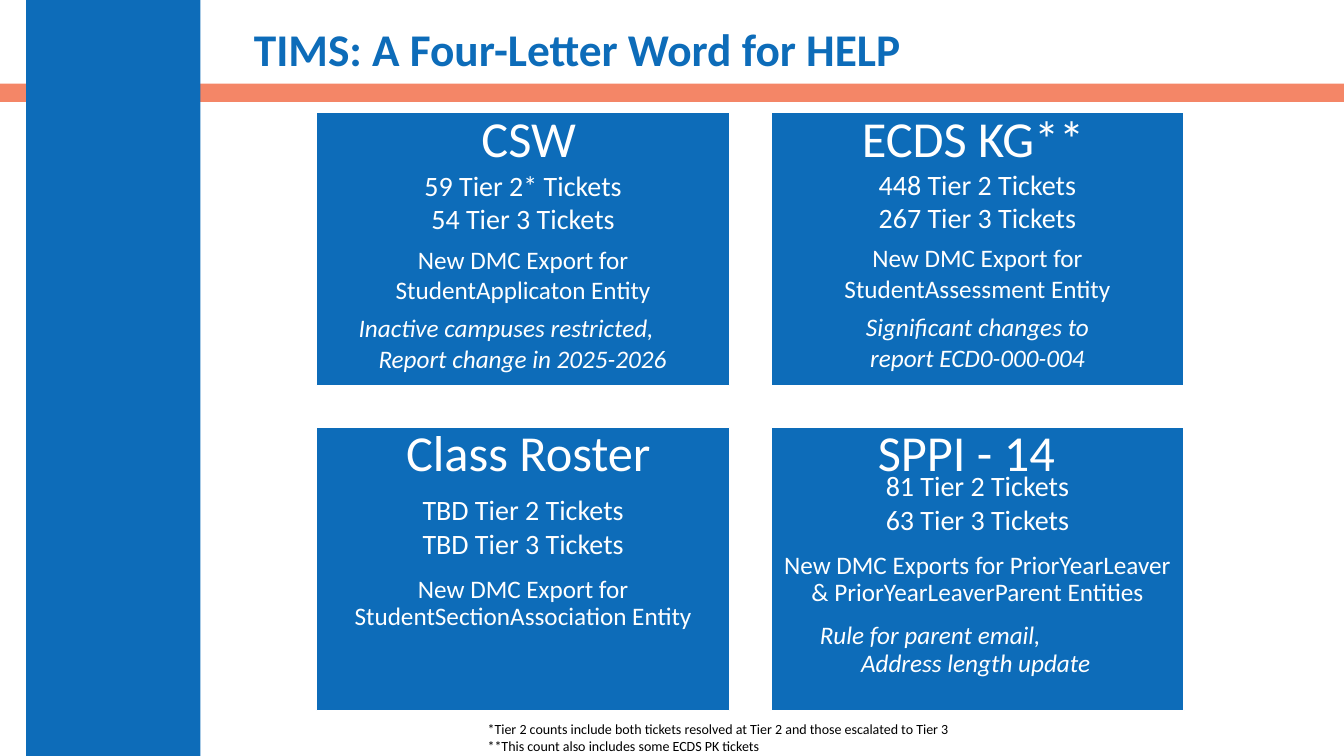
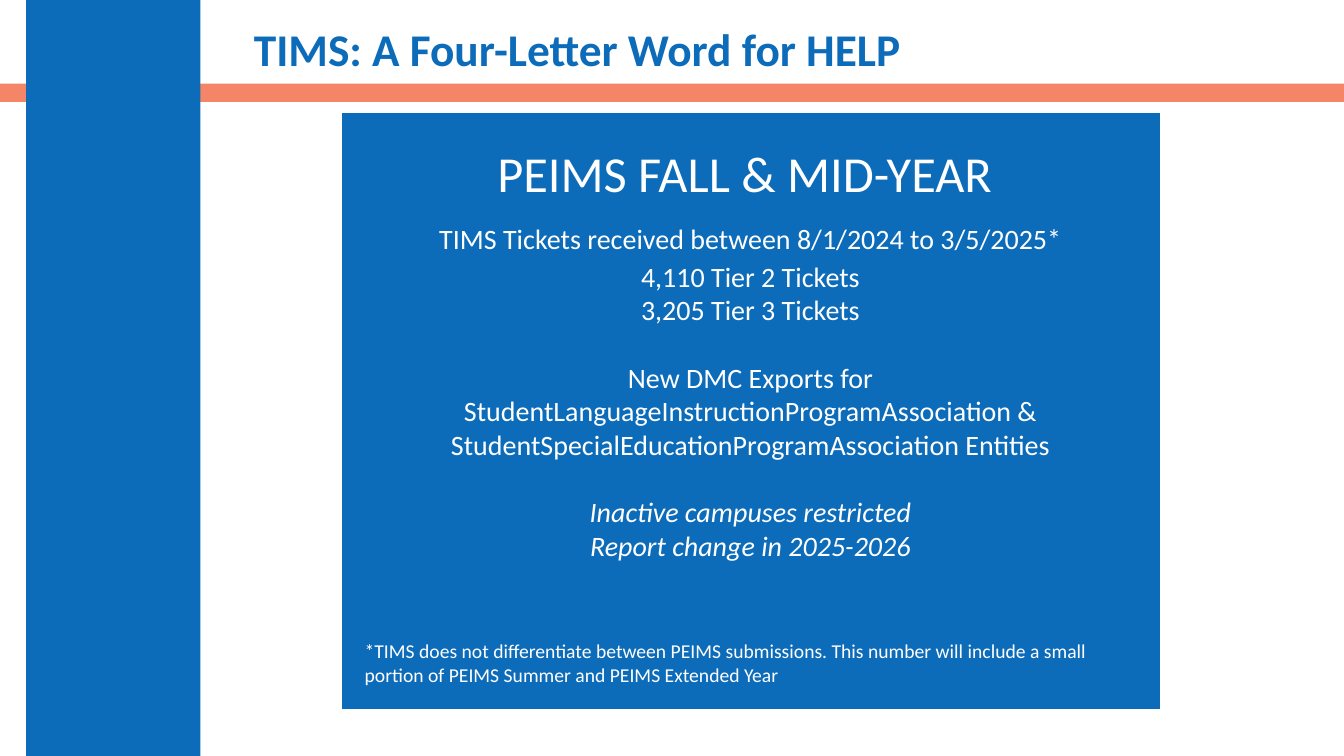
from lxml.etree import SubElement
from pptx import Presentation
from pptx.dml.color import RGBColor
from pptx.enum.shapes import MSO_SHAPE
from pptx.enum.text import MSO_ANCHOR, PP_ALIGN
from pptx.oxml.ns import qn
from pptx.util import Cm, Pt

BLUE = RGBColor(0x0D, 0x6C, 0xB9)
CORAL = RGBColor(0xF1, 0x60, 0x38)
WHITE = RGBColor(0xFF, 0xFF, 0xFF)
BLACK = RGBColor(0x00, 0x00, 0x00)
FONT = "Calibri"
WIDE, HIGH = 33.87, 19.05


def block(slide, x, y, w, h, fill=None, line=None, side=0.25, top=0.13):
    """Add a filled rectangle, or a plain text box when there is no fill."""
    area = Cm(x), Cm(y), Cm(w), Cm(h)
    if fill is None:
        shape = slide.shapes.add_textbox(*area)
    else:
        shape = slide.shapes.add_shape(MSO_SHAPE.RECTANGLE, *area)
        shape.shadow.inherit = False
        shape.fill.solid()
        shape.fill.fore_color.rgb = fill
        if line is None:
            shape.line.fill.background()
        else:
            shape.line.color.rgb = line
            shape.line.width = Pt(1)
    frame = shape.text_frame
    frame.word_wrap = True
    frame.vertical_anchor = MSO_ANCHOR.TOP
    frame.margin_left = frame.margin_right = Cm(side)
    frame.margin_top, frame.margin_bottom = Cm(top), Cm(0.13)
    return shape


def write(shape, text, size=20, color=WHITE, bold=False, italic=False,
          before=0, pitch=1.0, left=None, align=PP_ALIGN.CENTER):
    """Add one paragraph; a left indent in cm also aligns it left."""
    frame = shape.text_frame
    para = frame.add_paragraph() if frame.text else frame.paragraphs[0]
    if left is not None:
        para._p.get_or_add_pPr().set("marL", str(Cm(left)))
        align = PP_ALIGN.LEFT
    para.alignment = align
    para.line_spacing = pitch
    para.space_before = Pt(before)
    run = para.add_run()
    run.text = text
    font = run.font
    font.name, font.size, font.color.rgb = FONT, Pt(size), color
    font.bold, font.italic = bold, italic


deck = Presentation()
deck.slide_width, deck.slide_height = Cm(WIDE), Cm(HIGH)

# Both slides: band, pillar and title
pages = []
for _ in range(2):
    page = deck.slides.add_slide(deck.slide_layouts[6])
    band = block(page, 0, 2.11, WIDE, 0.46, fill=CORAL)
    tint = band.fill._xPr.find(".//" + qn("a:srgbClr"))
    SubElement(tint, qn("a:alpha"), val="76000")
    block(page, 0.66, 0, 4.39, HIGH, fill=BLUE)
    title = block(page, 6.15, 0.56, 26.44, 1.5)
    title.text_frame.vertical_anchor = MSO_ANCHOR.MIDDLE
    write(title, "TIMS: A Four-Letter Word for HELP", size=32.4, color=BLUE,
          bold=True, pitch=0.9, align=PP_ALIGN.LEFT)
    pages.append(page)
first, second = pages

# Slide 1: four cards (heading, heading shift, text top, pitch, tickets,
# export, rules with their indents)
cards = [
    ("CSW", 0.14, 1.4, 1.0,
     ["59 Tier 2* Tickets", "54 Tier 3 Tickets"],
     "New DMC Export for StudentApplicaton Entity",
     [("Inactive campuses restricted,", 0.86),
      ("Report change in 2025-2026", 1.36)]),
    ("ECDS KG**", -0.11, 1.37, 1.0,
     ["448 Tier 2 Tickets", "267 Tier 3 Tickets"],
     "New DMC Export for StudentAssessment Entity",
     [("Significant changes to", None), ("report ECD0-000-004", None)]),
    ("Class Roster", 0.13, 1.73, 0.9,
     ["TBD Tier 2 Tickets", "TBD Tier 3 Tickets"],
     "New DMC Export for StudentSectionAssociation Entity", []),
    ("SPPI - 14", -0.28, 1.12, 0.9,
     ["81 Tier 2 Tickets", "63 Tier 3 Tickets"],
     "New DMC Exports for PriorYearLeaver & PriorYearLeaverParent Entities",
     [("Rule for parent email,", 1.03), ("Address length update", 2.07)]),
]
CARD = 10.41
COLS = [7.98, 19.43]
ROWS = [(2.84, 6.88), (10.77, 7.14)]
for spot, (head, shift, top, pitch, counts, export, rules) in enumerate(cards):
    x = COLS[spot % 2]
    y, high = ROWS[spot // 2]
    tight = pitch < 1
    gap = 11.5 if tight else 6
    card = block(first, x, y, CARD, high, BLUE, WHITE, side=0.2, top=top)
    for row, text in enumerate(counts):
        write(card, text, pitch=pitch, before=3 if row and tight else 0)
    write(card, export, size=18, pitch=pitch, before=gap)
    for row, (text, left) in enumerate(rules):
        write(card, text, size=18, italic=True, pitch=pitch, left=left,
              before=0 if row else gap)
    label = block(first, x + shift, y - 0.28, CARD, 1.8)
    write(label, head, size=36)

# Slide 1: footnotes
notes = block(first, 12.04, 18.03, 13.72, 1)
for text in ("*Tier 2 counts include both tickets resolved at Tier 2 "
             "and those escalated to Tier 3",
             "**This count also includes some ECDS PK tickets"):
    write(notes, text, size=10, color=BLACK, align=PP_ALIGN.LEFT)

# Slide 2: one large card (text, space before, italic)
lines = [
    ("TIMS Tickets received between 8/1/2024 to 3/5/2025*", 0, False),
    ("4,110 Tier 2 Tickets", 3, False),
    ("3,205 Tier 3 Tickets", 0, False),
    ("New DMC Exports for", 24, False),
    ("StudentLanguageInstructionProgramAssociation &", 0, False),
    ("StudentSpecialEducationProgramAssociation Entities", 0, False),
    ("Inactive campuses restricted", 24, True),
    ("Report change in 2025-2026", 0, True),
]
panel = block(second, 8.59, 2.84, 20.65, 15.04, BLUE, WHITE, side=0.2, top=2.74)
for text, before, italic in lines:
    write(panel, text, before=before, italic=italic)
label = block(second, 11, 3.45, 15.54, 1.8)
write(label, "PEIMS FALL & MID-YEAR", size=36)

# Slide 2: footnote
note = block(second, 8.94, 15.98, 19.96, 1.45)
write(note, "*TIMS does not differentiate between PEIMS submissions. This number "
      "will include a small portion of PEIMS Summer and PEIMS Extended Year",
      size=14, align=PP_ALIGN.LEFT)

deck.save("out.pptx")
